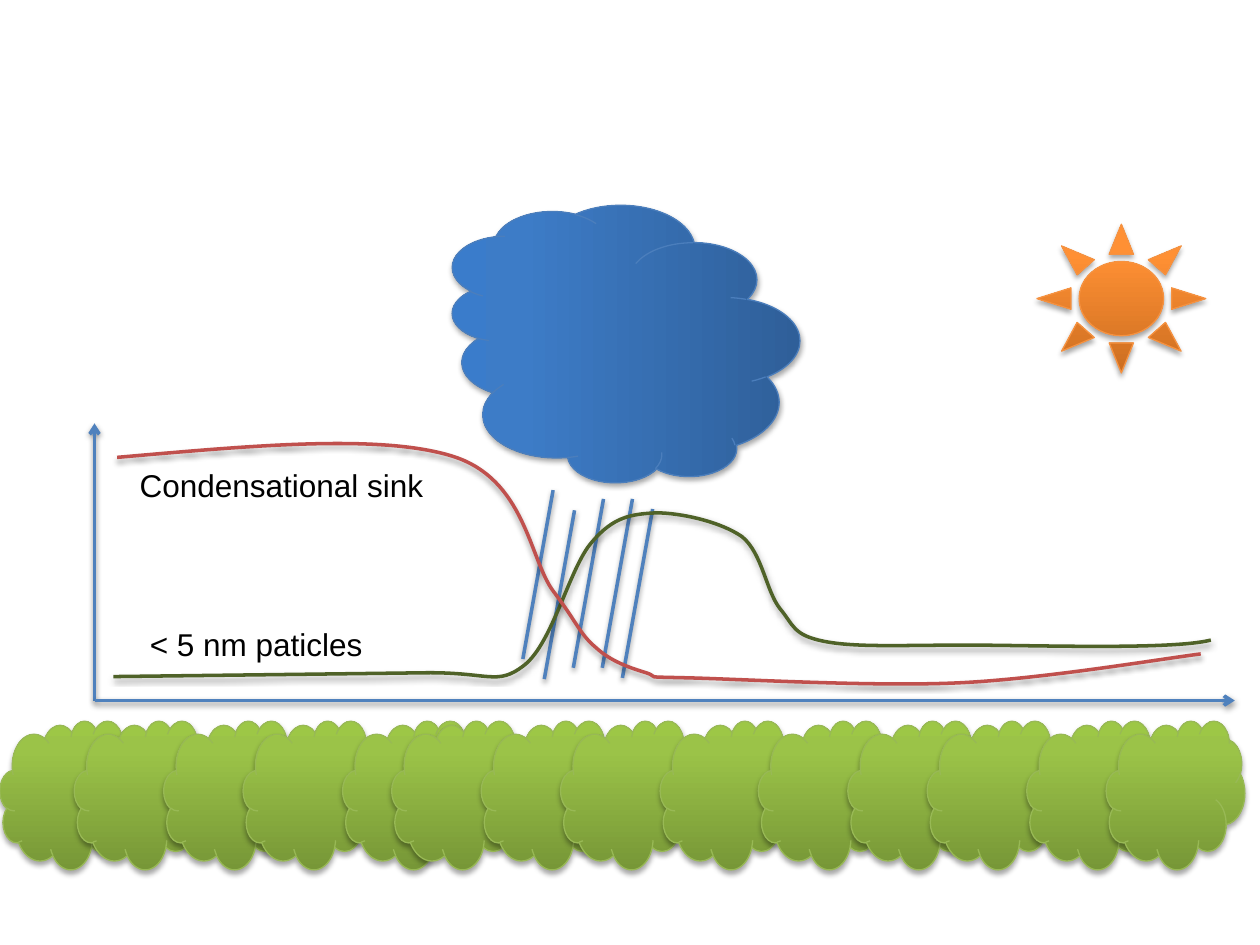
"""Build the slide on rain, condensational sink and small particles."""
from lxml import etree
from pptx import Presentation
from pptx.dml.color import RGBColor
from pptx.enum.shapes import MSO_CONNECTOR, MSO_SHAPE
from pptx.enum.text import MSO_AUTO_SIZE
from pptx.oxml.ns import qn
from pptx.util import Inches, Pt

CLOUD, SUN = MSO_SHAPE.CLOUD, MSO_SHAPE.SUN
STRAIGHT = MSO_CONNECTOR.STRAIGHT
FIT_SHAPE = MSO_AUTO_SIZE.SHAPE_TO_FIT_TEXT
BLUE, DARK_GREEN, RED, BLACK = "4F81BD", "4F6228", "C0504D", "000000"
LEAF = ("779737", "9BC348", "9DC746")
RAINCLOUD = ("2F5F99", "3D7CC7", "3A7CCB")
SUNLIGHT = ("CC6E20", "FF9034", "FF9136")
STOPS = (0, 80, 100)


def rgb(value):
    return RGBColor.from_string(value)


def add_xml(parent, tag, **attributes):
    return etree.SubElement(parent, qn(tag), {k: str(v) for k, v in attributes.items()})


class SlidePainter:
    def __init__(self, slide):
        self.slide = slide
        self.font = {"name": "Arial", "size": Pt(18)}
        self.frame = {"word_wrap": False, "auto_size": FIT_SHAPE}

    def outline(self, shape, color, width):
        shape.line.color.rgb = rgb(color)
        shape.line.width = Pt(width)

    def shadow(self, shape, distance, opacity):
        effects = add_xml(shape._element.spPr, "a:effectLst")
        outer = add_xml(effects, "a:outerShdw", blurRad=Pt(3.1), dist=Pt(distance),
                        dir=90 * 60000, rotWithShape=0)
        tint = add_xml(outer, "a:srgbClr", val=BLACK)
        add_xml(tint, "a:alpha", val=opacity * 1000)

    def figure(self, kind, left, top, width, height, colors, edge, rotation=0):
        shape = self.slide.shapes.add_shape(
            kind, Inches(left), Inches(top), Inches(width), Inches(height))
        shape.rotation = rotation
        shape.fill.gradient()
        shape.fill.gradient_angle = 90
        stops = shape._element.spPr.find(".//" + qn("a:gsLst"))
        for stop in list(stops):
            stops.remove(stop)
        for position, color in zip(STOPS, colors):
            stop = add_xml(stops, "a:gs", pos=position * 1000)
            add_xml(stop, "a:srgbClr", val=color)
        self.outline(shape, edge, 0.75)
        self.shadow(shape, 1.8, 35)

    def line(self, start, end, arrow=False):
        connector = self.slide.shapes.add_connector(
            STRAIGHT, *(Inches(value) for value in (*start, *end)))
        self.outline(connector, BLUE, 2)
        if arrow:
            add_xml(connector.line._get_or_add_ln(), "a:tailEnd", type="arrow")
        self.shadow(connector, 1.6, 38)

    def curve(self, points, color):
        start, *rest = [(Inches(x), Inches(y)) for x, y in points]
        builder = self.slide.shapes.build_freeform(*start)
        builder.add_line_segments(rest, close=False)
        shape = builder.convert_to_shape()
        segments = list(shape._element.iter(qn("a:lnTo")))
        for first in range(0, len(segments), 3):
            triple = segments[first:first + 3]
            bezier = add_xml(triple[0].getparent(), "a:cubicBezTo")
            for segment in triple:
                bezier.append(segment[0])
                segment.getparent().remove(segment)
        shape.fill.background()
        self.outline(shape, color, 2)
        self.shadow(shape, 1.6, 38)

    def label(self, text, left, top, width):
        box = self.slide.shapes.add_textbox(
            Inches(left), Inches(top), Inches(width), Inches(0.4))
        for name, value in self.frame.items():
            setattr(box.text_frame, name, value)
        run = box.text_frame.paragraphs[0].add_run()
        run.text = text
        for name, value in self.font.items():
            setattr(run.font, name, value)
        run.font.color.rgb = rgb(BLACK)


def main():
    deck = Presentation()
    deck.slide_width, deck.slide_height = Inches(10), Inches(7.5)
    painter = SlidePainter(deck.slides.add_slide(deck.slide_layouts[6]))

    painter.figure(CLOUD, 3.86, 1.35, 2.2, 2.76, RAINCLOUD, "4B7EBC", rotation=270)
    painter.figure(SUN, 8.23, 1.78, 1.34, 1.18, SUNLIGHT, "F69240")
    for x, y in ((4.39, 3.89), (4.56, 4.05), (4.79, 3.96), (5.02, 3.96), (5.18, 4.04)):
        painter.line((x, y), (x - 0.24, y + 1.34))

    painter.label("Condensational sink", 1.01, 3.65, 2.48)
    small_particles = (
        (0.9, 5.37), (1.72, 5.36), (2.53, 5.35), (3.35, 5.34),
        (3.89, 5.33), (3.94, 5.45), (4.16, 5.28), (4.39, 5.1), (4.52, 4.5), (4.7, 4.3),
        (4.87, 4.1), (5.01, 4.08), (5.21, 4.07), (5.4, 4.07), (5.72, 4.14), (5.89, 4.26),
        (6.05, 4.39), (6.08, 4.69), (6.19, 4.83), (6.3, 4.96), (6.29, 5.04), (6.54, 5.09),
        (6.79, 5.14), (7.16, 5.12), (7.67, 5.12), (8.18, 5.12), (9.3, 5.16), (9.61, 5.08))
    condensational_sink = (
        (0.93, 3.63), (1.97, 3.54), (3.01, 3.44), (3.59, 3.62),
        (4.17, 3.8), (4.2, 4.43), (4.39, 4.69), (4.58, 4.94), (4.6, 5.03), (4.73, 5.14),
        (4.85, 5.25), (5, 5.3), (5.13, 5.34), (5.25, 5.38), (5.06, 5.37), (5.47, 5.38),
        (5.88, 5.39), (6.92, 5.45), (7.6, 5.42), (8.27, 5.39), (9.21, 5.23), (9.53, 5.19))
    painter.curve(small_particles, DARK_GREEN)
    painter.curve(condensational_sink, RED)
    painter.label("< 5 nm paticles", 1.09, 4.91, 1.91)

    for axis_end in ((0.75, 3.36), (9.8, 5.56)):
        painter.line((0.75, 5.56), axis_end, arrow=True)
    for left in (0, 0.59, 1.3, 1.93, 2.72, 3.11, 3.82, 4.45,
                 5.24, 6.02, 6.73, 7.36, 8.15, 8.78):
        painter.figure(CLOUD, left, 5.72, 1.1, 1.18, LEAF, "98B955")
    deck.save("out.pptx")


if __name__ == "__main__":
    main()
